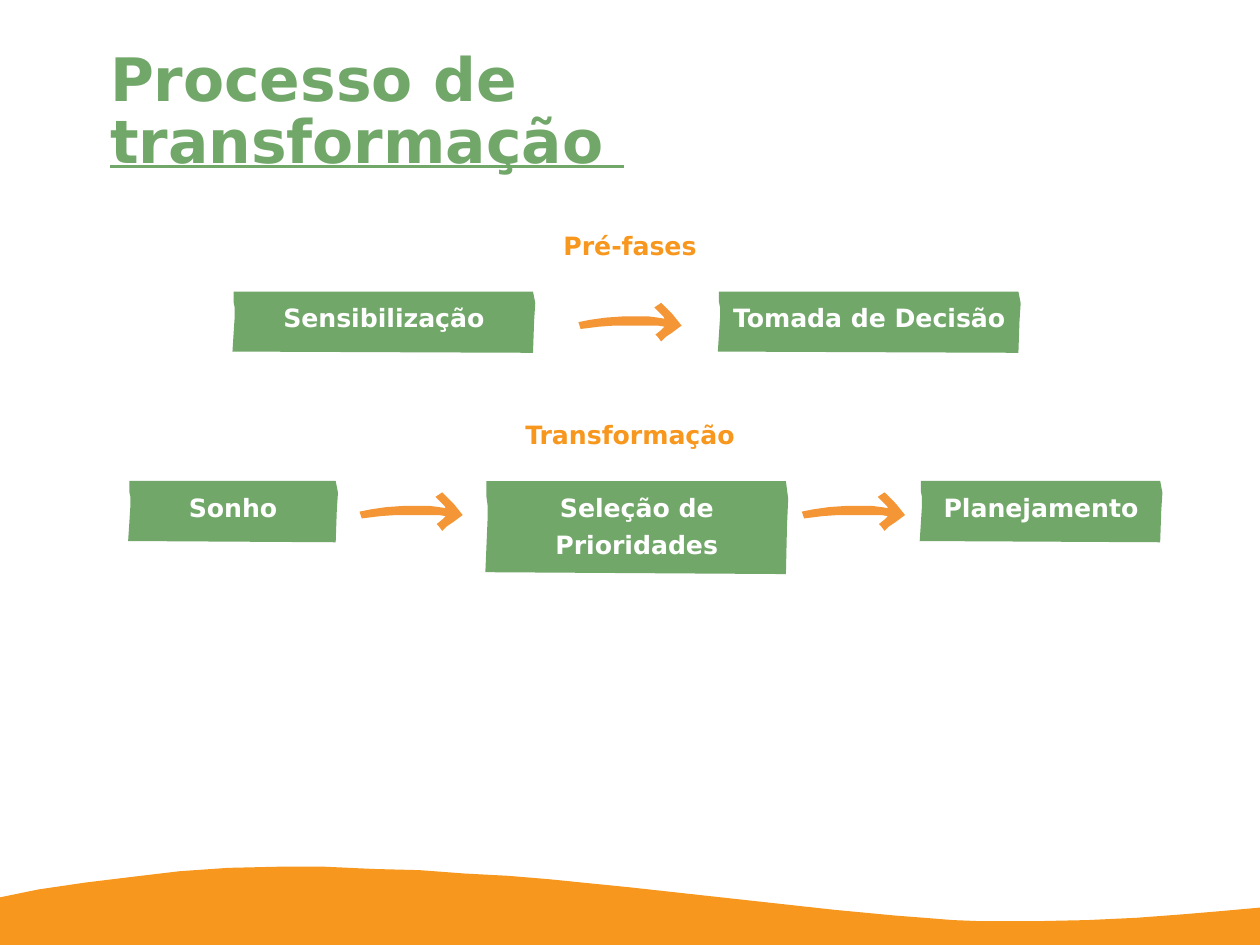
from dataclasses import dataclass

from pptx import Presentation
from pptx.dml.color import RGBColor
from pptx.enum.text import MSO_ANCHOR, MSO_AUTO_SIZE, PP_ALIGN
from pptx.util import Inches, Pt

TOP = MSO_ANCHOR.TOP
NO_AUTOFIT = MSO_AUTO_SIZE.NONE
LEFT = PP_ALIGN.LEFT
CENTER = PP_ALIGN.CENTER

SLIDE_WIDTH, SLIDE_HEIGHT = 11.11, 8.33
TITLE_ONLY = 5


@dataclass(frozen=True)
class Theme:
    """Colours, font and type sizes of the slide."""
    green: RGBColor = RGBColor(0x72, 0xA7, 0x6A)
    orange: RGBColor = RGBColor(0xF8, 0x97, 0x1D)
    arrow: RGBColor = RGBColor(0xF4, 0x96, 0x35)
    white: RGBColor = RGBColor(0xFF, 0xFF, 0xFF)
    font: str = "DejaVu Sans"
    title_size: int = 38
    body_size: int = 16


THEME = Theme()

WAVE_CREST = [
    (0, 0.27), (0.34, 0.2), (0.75, 0.14), (1.16, 0.09), (1.58, 0.04),
    (2.01, 0.01), (2.44, 0), (2.87, 0), (3.3, 0.02), (3.7, 0.03),
    (4.1, 0.06), (4.48, 0.08), (4.84, 0.11), (5.54, 0.18), (7.36, 0.38),
    (7.89, 0.43), (8.15, 0.45), (8.4, 0.47), (8.65, 0.48), (8.89, 0.48),
    (9.13, 0.48), (9.59, 0.47), (10.02, 0.45), (10.42, 0.42),
    (10.78, 0.39), (11.11, 0.36),
]
ARROW_OUTLINE = [
    (0.73, 0), (0.67, 0.04), (0.75, 0.12), (0.76, 0.14), (0.7, 0.13),
    (0.62, 0.12), (0.53, 0.12), (0.39, 0.12), (0.24, 0.13), (0.1, 0.15),
    (0, 0.17), (0.02, 0.23), (0.1, 0.22), (0.18, 0.21), (0.32, 0.2),
    (0.48, 0.2), (0.63, 0.2), (0.7, 0.2), (0.76, 0.21), (0.73, 0.24),
    (0.68, 0.28), (0.7, 0.3), (0.73, 0.34), (0.77, 0.3), (0.83, 0.26),
    (0.91, 0.2), (0.87, 0.15), (0.83, 0.1), (0.77, 0.04),
]
STEP_LEFT_EDGE = [(0.01, 0), (0.01, 0.17), (0.02, 0.26), (0.02, 0.41), (0, 0.98)]
STEP_RIGHT_EDGE = [(0.02, 1), (0.01, 0.48), (0, 0.19), (0.02, 0)]

PHASES = [
    {"heading": "Pré-fases", "top": 2.03,
     "steps": [("Sensibilização", 2.05, 2.67, 0.54),
               ("Tomada de Decisão", 6.33, 2.67, 0.54)],
     "arrows": [5.1]},
    {"heading": "Transformação", "top": 3.7,
     "steps": [("Sonho", 1.13, 1.85, 0.54),
               ("Seleção de Prioridades", 4.28, 2.67, 0.82),
               ("Planejamento", 8.11, 2.14, 0.54)],
     "arrows": [3.17, 7.07]},
]


def add_outline(slide, left, top, points, color):
    """Draw a filled closed outline from points relative to left and top."""
    corners = [(Inches(left + x), Inches(top + y)) for x, y in points]
    builder = slide.shapes.build_freeform(*corners[0], scale=1.0)
    builder.add_line_segments(corners[1:], close=True)
    outline = builder.convert_to_shape()
    outline.shadow.inherit = False
    outline.fill.solid()
    outline.fill.fore_color.rgb = color
    outline.line.fill.background()
    return outline


def prepare_frame(frame, top_inset=0.0):
    """Give a text frame fixed size, wrapping and no side insets."""
    frame.auto_size = NO_AUTOFIT
    frame.word_wrap = True
    frame.vertical_anchor = TOP
    frame.margin_left = frame.margin_right = frame.margin_bottom = 0
    frame.margin_top = Inches(top_inset)


def add_run(paragraph, text, size, color, align):
    """Add one bold run and align its paragraph."""
    paragraph.alignment = align
    run = paragraph.add_run()
    run.text = text
    run.font.name = THEME.font
    run.font.size = Pt(size)
    run.font.bold = True
    run.font.color.rgb = color
    return run


def add_wave(slide, left, top, width, height):
    """Draw the orange wave along the bottom of the slide."""
    points = WAVE_CREST + [(width, height), (0, height)]
    add_outline(slide, left, top, points, THEME.orange)


def add_title(slide, left, top, width, height):
    """Place the two-line title with its second line underlined."""
    title = slide.shapes.title
    title.left, title.top = Inches(left), Inches(top)
    title.width, title.height = Inches(width), Inches(height)
    frame = title.text_frame
    prepare_frame(frame)
    first_line, second_line = frame.paragraphs[0], frame.add_paragraph()
    for line, text, spacing in ((first_line, "Processo de", 40.8),
                                (second_line, "transformação ", 39.8)):
        line.line_spacing = Pt(spacing)
        line.space_before = Pt(0)
        run = add_run(line, text, THEME.title_size, THEME.green, LEFT)
        run.font.underline = line is second_line


def add_step(slide, text, left, top, width, height):
    """Draw a green brush-stroke box holding a step name."""
    points = [(x, y * height) for x, y in STEP_LEFT_EDGE]
    points += [(width - x, y * height) for x, y in STEP_RIGHT_EDGE]
    step = add_outline(slide, left, top, points, THEME.green)
    prepare_frame(step.text_frame, top_inset=0.03)
    label = step.text_frame.paragraphs[0]
    label.line_spacing = 1.25
    add_run(label, text, THEME.body_size, THEME.white, CENTER)


def add_phase(slide, phase, left, width):
    """Place a phase heading and, below it, its steps joined by arrows."""
    top = phase["top"]
    heading = slide.shapes.add_textbox(
        Inches(left), Inches(top), Inches(width), Inches(0.28))
    prepare_frame(heading.text_frame)
    add_run(heading.text_frame.paragraphs[0], phase["heading"],
            THEME.body_size, THEME.orange, CENTER)
    for text, step_left, step_width, step_height in phase["steps"]:
        add_step(slide, text, left + step_left, top + 0.54, step_width, step_height)
    for arrow_left in phase["arrows"]:
        add_outline(slide, left + arrow_left, top + 0.64, ARROW_OUTLINE, THEME.arrow)


def main():
    """Build the slide and save it."""
    deck = Presentation()
    deck.slide_width, deck.slide_height = Inches(SLIDE_WIDTH), Inches(SLIDE_HEIGHT)
    slide = deck.slides.add_slide(deck.slide_layouts[TITLE_ONLY])
    add_wave(slide, 0, 7.64, SLIDE_WIDTH, 0.69)
    add_title(slide, 0.97, 0.43, 9.18, 1.13)
    for phase in PHASES:
        add_phase(slide, phase, 0, SLIDE_WIDTH)
    deck.save("out.pptx")


if __name__ == "__main__":
    main()
